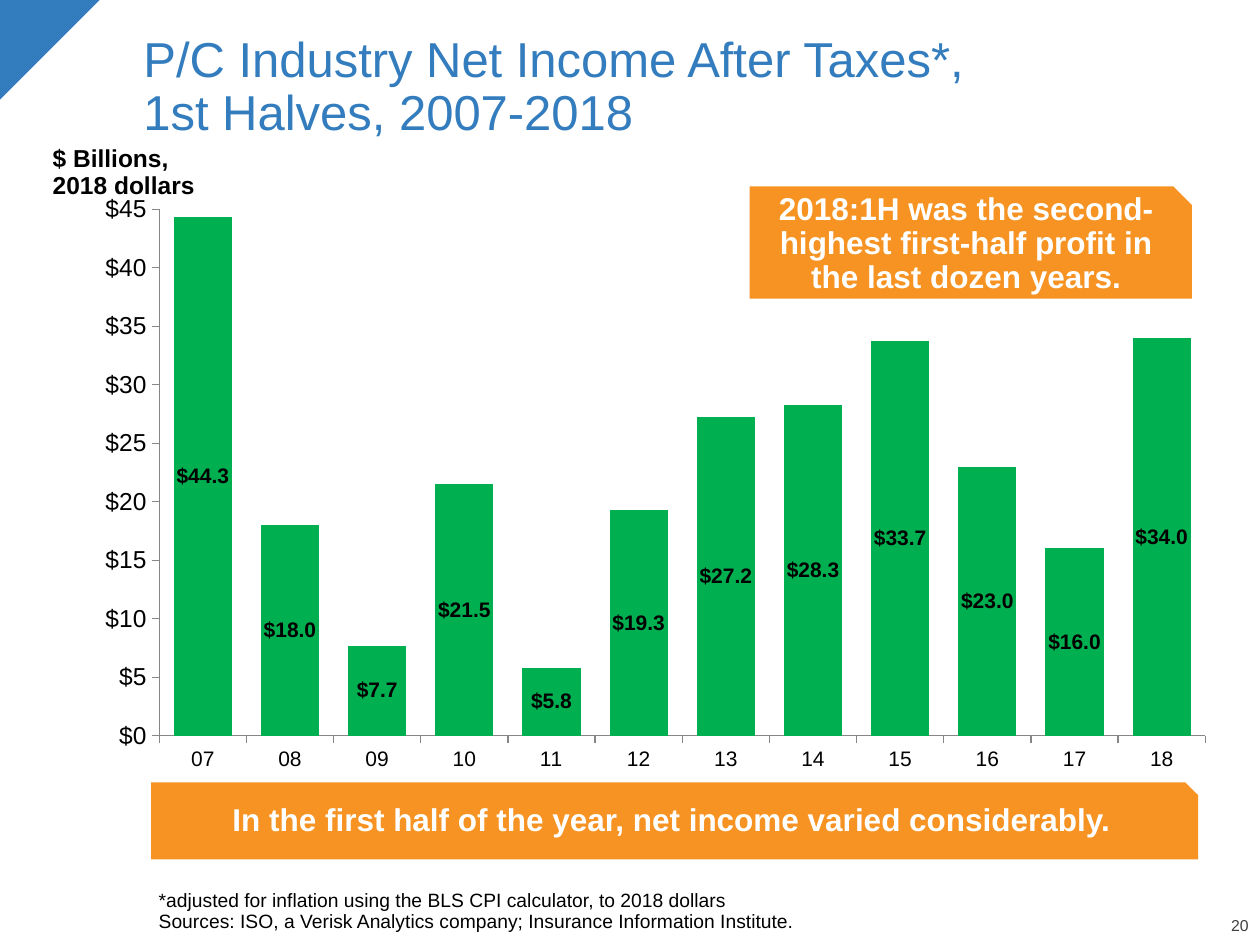
from lxml import etree
from pptx import Presentation
from pptx import util as u
from pptx.chart.data import CategoryChartData
from pptx.dml.color import RGBColor
from pptx.enum import chart as ch, shapes, text
from pptx.oxml import parse_xml
from pptx.oxml.ns import nsdecls

COLORS = {"blue": "337DBE", "orange": "F69322", "green": "00B050", "axis": "868686",
          "black": "000000", "white": "FFFFFF", "gray": "404040"}
FONT = "Arial"
COLUMNS, ROWS = 100, 75

prs = Presentation()
prs.slide_width, prs.slide_height = u.Inches(10), u.Inches(7.5)
slide = prs.slides.add_slide(prs.slide_layouts[6])


def cells(left, top, width, height):
    """Turn grid columns and rows into slide lengths."""
    col, row = prs.slide_width / COLUMNS, prs.slide_height / ROWS
    return [u.Emu(round(n)) for n in (left * col, top * row, width * col, height * row)]


def write(shape, lines, size, color, bold=False, align=text.PP_ALIGN.LEFT,
          anchor=text.MSO_ANCHOR.MIDDLE, insets=(0.1, 0.05, 0.1, 0.05)):
    frame = shape.text_frame
    frame.word_wrap = True
    frame.vertical_anchor = anchor
    (frame.margin_left, frame.margin_top,
     frame.margin_right, frame.margin_bottom) = map(u.Inches, insets)
    para = frame.paragraphs[0]
    para.alignment, para.line_spacing = align, 0.9
    for i, line in enumerate(lines):
        if i:
            para.add_line_break()
        run = para.add_run()
        run.text = line
        run.font.name, run.font.size, run.font.bold = FONT, u.Pt(size), bold
        run.font.color.rgb = RGBColor.from_string(COLORS[color])


# Corner, page number, title and footnote
corner = slide.shapes.add_shape(shapes.MSO_SHAPE.RIGHT_TRIANGLE, *cells(-0.1, 0, 8, 8))
corner.rotation = 90
corner.shadow.inherit = False
corner.fill.solid()
corner.fill.fore_color.rgb = RGBColor.from_string(COLORS["blue"])
corner.line.fill.background()

page_number = slide.shapes.add_textbox(*cells(94.3, 72.9, 4.8, 1.3))
write(page_number, ["20"], 9, "gray", align=text.PP_ALIGN.RIGHT,
      anchor=text.MSO_ANCHOR.BOTTOM, insets=(0, 0, 0, 0))

title = slide.shapes.add_textbox(*cells(10.4, 2.1, 86.4, 9.8))
write(title, ["P/C Industry Net Income After Taxes*,", "1st Halves, 2007-2018"], 28, "blue")

footnote = slide.shapes.add_textbox(*cells(12.6, 69.5, 84, 4.5))
write(footnote, ["*adjusted for inflation using the BLS CPI calculator, to 2018 dollars",
                 "Sources: ISO, a Verisk Analytics company; Insurance Information Institute."],
      11, "black", anchor=text.MSO_ANCHOR.BOTTOM, insets=(0, 0, 0, 0))

# Net income chart
income = CategoryChartData()
income.categories = [f"{year:02d}" for year in range(7, 19)]
income.add_series("Net income", [44.3, 18, 7.7, 21.5, 5.8, 19.3, 27.2, 28.3, 33.7, 23, 16, 34])
chart = slide.shapes.add_chart(ch.XL_CHART_TYPE.COLUMN_STACKED,
                               *cells(3, 15.5, 93.6, 48.2), income).chart
chart.has_legend = chart.has_title = False
chart.font.name, chart.font.size = FONT, u.Pt(12)
chart.font.color.rgb = RGBColor.from_string(COLORS["black"])

dollars, years = chart.value_axis, chart.category_axis
dollars.minimum_scale, dollars.maximum_scale, dollars.major_unit = 0, 45, 5
dollars.has_major_gridlines = False
dollars.tick_labels.number_format = '"$"#,##0'
dollars.tick_labels.number_format_is_linked = False
dollars.tick_labels.font.size = u.Pt(14)
years.tick_label_position = ch.XL_TICK_LABEL_POSITION.LOW
for axis in (dollars, years):
    axis.major_tick_mark = ch.XL_TICK_MARK.OUTSIDE
    axis.format.line.color.rgb = RGBColor.from_string(COLORS["axis"])
    axis.format.line.width = u.Pt(0.75)

plot = chart.plots[0]
plot.gap_width, plot.overlap, plot.vary_by_categories = 50, 100, False
bars = plot.series[0]
bars.format.fill.solid()
bars.format.fill.fore_color.rgb = RGBColor.from_string(COLORS["green"])
labels = bars.data_labels
labels.show_value = True
labels.position = ch.XL_LABEL_POSITION.CENTER
labels.number_format, labels.number_format_is_linked = '"$"#,##0.0', False
labels.font.bold, labels.font.size, labels.font.name = True, u.Pt(12), FONT
labels.font.color.rgb = RGBColor.from_string(COLORS["black"])

# Fixed inner plot area, as shares of the chart
layout = parse_xml(f'<c:layout {nsdecls("c")}><c:manualLayout/></c:layout>')
settings = {"layoutTarget": "inner", "xMode": "edge", "yMode": "edge",
            "x": 0.103, "y": 0.023, "w": 0.887, "h": 0.867}
for key, value in settings.items():
    etree.SubElement(layout[0], f"{{{layout.nsmap['c']}}}{key}", val=str(value))
plot_area = chart.element.find(".//c:plotArea", layout.nsmap)
for automatic in plot_area.findall("c:layout", layout.nsmap):
    plot_area.remove(automatic)
plot_area.insert(0, layout)

# Unit caption and callouts
unit = slide.shapes.add_textbox(*cells(3.2, 11.1, 14, 5.3))
write(unit, ["$ Billions, 2018 dollars"], 14, "black", bold=True)

callouts = [
    ((12, 62.1, 83.1, 6.1), "In the first half of the year, net income varied considerably."),
    ((59.5, 14.8, 35.1, 8.9),
     "2018:1H was the second-highest first-half profit in the last dozen years."),
]
for place, message in callouts:
    callout = slide.shapes.add_shape(shapes.MSO_SHAPE.SNIP_1_RECTANGLE, *cells(*place))
    callout.shadow.inherit = False
    callout.fill.solid()
    callout.fill.fore_color.rgb = RGBColor.from_string(COLORS["orange"])
    callout.line.fill.background()
    write(callout, [message], 18, "white", bold=True, align=text.PP_ALIGN.CENTER,
          insets=(0.1, 0.05, 0.1, 0.1))

prs.save("out.pptx")
